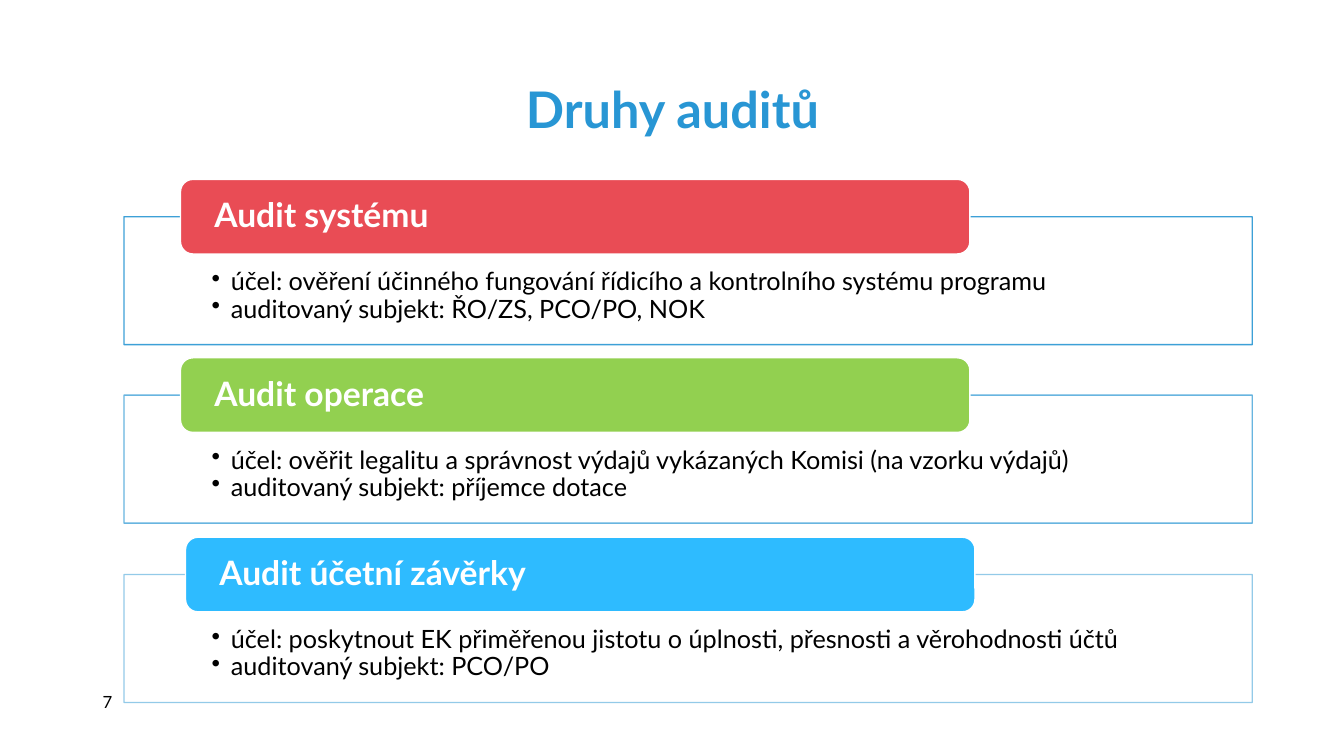
from lxml import etree
from pptx import Presentation
from pptx.dml.color import RGBColor
from pptx.enum.shapes import MSO_SHAPE
from pptx.enum.text import MSO_ANCHOR, MSO_AUTO_SIZE, PP_ALIGN
from pptx.oxml.ns import qn
from pptx.util import Pt

PX = 9144
FONT = "Lato"
RECT = MSO_SHAPE.RECTANGLE
ROUNDED = MSO_SHAPE.ROUNDED_RECTANGLE
LEFT, CENTER = PP_ALIGN.LEFT, PP_ALIGN.CENTER
TOP, MIDDLE = MSO_ANCHOR.TOP, MSO_ANCHOR.MIDDLE
NO_AUTOFIT = MSO_AUTO_SIZE.NONE

COLORS = {
    "title": "2896D4",
    "panel_line": "2896D3",
    "text": "000000",
    "white": "FFFFFF",
    "system": "E94C55",
    "operation": "92D050",
    "accounts": "2EBBFF",
}

AUDITS = [
    ("Audit systému", "system", 179, 90, [
        "účel: ověření účinného fungování řídicího a kontrolního systému programu",
        "auditovaný subjekt: ŘO/ZS, PCO/PO, NOK",
    ]),
    ("Audit operace", "operation", 179, 70, [
        "účel: ověřit legalitu a správnost výdajů vykázaných Komisi (na vzorku výdajů)",
        "auditovaný subjekt: příjemce dotace",
    ]),
    ("Audit účetní závěrky", "accounts", 184, 50, [
        "účel: poskytnout EK přiměřenou jistotu o úplnosti, přesnosti a věrohodnosti účtů",
        "auditovaný subjekt: PCO/PO",
    ]),
]


def rgb(name):
    """Return the named colour."""
    return RGBColor.from_string(COLORS[name])


def set_alpha(fill, percent):
    """Make a solid fill partly transparent."""
    color = fill._xPr.find(qn("a:solidFill"))[0]
    etree.SubElement(color, qn("a:alpha"), val=str(percent * 1000))


def add_bullet(paragraph):
    """Give a paragraph a bullet with a hanging indent."""
    properties = paragraph._p.get_or_add_pPr()
    properties.set("marL", str(19 * PX))
    properties.set("indent", str(-19 * PX))
    etree.SubElement(properties, qn("a:buChar"), char="•")


def style_paragraph(paragraph, size, color, bold=False, align=LEFT, spacing=0.9):
    """Format a paragraph and its runs."""
    paragraph.alignment = align
    paragraph.line_spacing = spacing
    for run in paragraph.runs:
        run.font.name = FONT
        run.font.size = Pt(size)
        run.font.bold = bold
        run.font.color.rgb = rgb(color)


def set_frame(frame, anchor, side, top, bottom):
    """Set the wrapping, anchor and margins of a text frame."""
    frame.word_wrap = True
    frame.vertical_anchor = anchor
    frame.margin_left = frame.margin_right = side * PX
    frame.margin_top, frame.margin_bottom = top * PX, bottom * PX


def add_block(slide, kind, box, fill, line):
    """Add a filled and outlined shape."""
    block = slide.shapes.add_shape(kind, *(n * PX for n in box))
    block.shadow.inherit = False
    block.fill.solid()
    block.fill.fore_color.rgb = rgb(fill)
    block.line.color.rgb = rgb(line)
    block.line.width = Pt(1)
    return block


def add_panel(slide, top, line_alpha, points):
    """Add an outlined panel holding a bulleted list."""
    panel = add_block(slide, RECT, (123, top, 1119, 127), "white", "panel_line")
    set_alpha(panel.fill, 90)
    set_alpha(panel.line.fill, line_alpha)
    frame = panel.text_frame
    set_frame(frame, TOP, 87, 52, 14)
    frame.text = "\n".join(points)
    for paragraph in frame.paragraphs:
        add_bullet(paragraph)
        style_paragraph(paragraph, 18, "text")


def add_heading(slide, left, top, label, fill):
    """Add the rounded heading of a panel."""
    heading = add_block(slide, ROUNDED, (left, top, 783, 74), fill, "white")
    frame = heading.text_frame
    set_frame(frame, MIDDLE, 30, 0, 0)
    frame.text = label
    style_paragraph(frame.paragraphs[0], 24, "white", bold=True)


def add_title(slide, words):
    """Place and format the slide title."""
    title = slide.shapes.title
    title.left, title.top, title.width, title.height = (
        n * PX for n in (92, 40, 1150, 127))
    frame = title.text_frame
    frame.text = words
    frame.auto_size = NO_AUTOFIT
    frame.vertical_anchor = MIDDLE
    style_paragraph(frame.paragraphs[0], 36, "title", True, CENTER, 1.13)


def add_page_number(slide, number):
    """Add the page number at the lower left."""
    page = slide.shapes.add_textbox(*(n * PX for n in (92, 675, 48, 43)))
    frame = page.text_frame
    set_frame(frame, MIDDLE, 10, 5, 5)
    frame.text = number
    style_paragraph(frame.paragraphs[0], 12, "text", spacing=1.0)


def main():
    """Build and save the slide."""
    deck = Presentation()
    deck.slide_width, deck.slide_height = 1333 * PX, 750 * PX
    slide = deck.slides.add_slide(deck.slide_layouts[5])
    add_title(slide, "Druhy auditů")
    add_page_number(slide, "7")
    for index, (label, fill, left, line_alpha, points) in enumerate(AUDITS):
        panel_top = 215 + index * 355 // 2
        add_panel(slide, panel_top, line_alpha, points)
        add_heading(slide, left, panel_top - 37, label, fill)
    deck.save("out.pptx")


if __name__ == "__main__":
    main()
